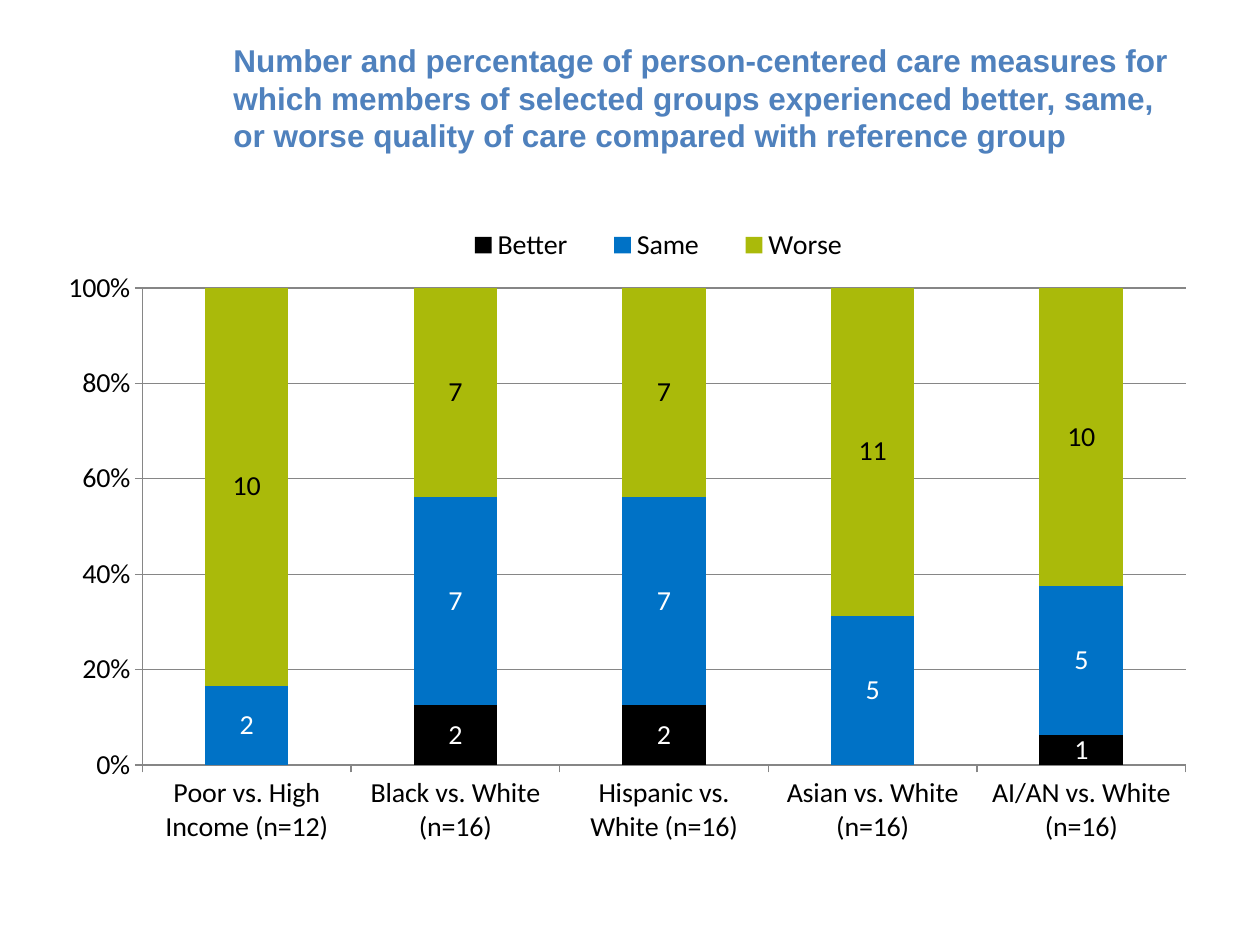
from lxml import etree
from pptx import Presentation
from pptx.chart.data import CategoryChartData
from pptx.dml.color import RGBColor
from pptx.enum.chart import XL_CHART_TYPE, XL_LABEL_POSITION, XL_LEGEND_POSITION, XL_TICK_MARK
from pptx.enum.text import MSO_ANCHOR, MSO_AUTO_SIZE, PP_ALIGN
from pptx.oxml.ns import qn
from pptx.util import Cm, Pt

STACKED = XL_CHART_TYPE.COLUMN_STACKED_100
CENTER = XL_LABEL_POSITION.CENTER
TOP = XL_LEGEND_POSITION.TOP
OUTSIDE = XL_TICK_MARK.OUTSIDE
MIDDLE = MSO_ANCHOR.MIDDLE
NO_FIT = MSO_AUTO_SIZE.NONE
LEFT = PP_ALIGN.LEFT

TITLE_BLUE = RGBColor(0x4F, 0x81, 0xBD)
BLACK = RGBColor(0x00, 0x00, 0x00)
WHITE = RGBColor(0xFF, 0xFF, 0xFF)
BLUE = RGBColor(0x00, 0x72, 0xC6)
GREEN = RGBColor(0xAA, 0xBA, 0x0A)
GRAY = RGBColor(0x86, 0x86, 0x86)

TITLE = ("Number and percentage of person-centered care measures for which "
         "members of selected groups experienced better, same, or worse "
         "quality of care compared with reference group")
GROUPS = ["Poor vs. High Income (n=12)", "Black vs. White (n=16)",
          "Hispanic vs. White (n=16)", "Asian vs. White (n=16)",
          "AI/AN vs. White (n=16)"]
SERIES = [("Better", (None, 2, 2, None, 1), BLACK, WHITE),
          ("Same", (2, 7, 7, 5, 5), BLUE, WHITE),
          ("Worse", (10, 7, 7, 11, 10), GREEN, BLACK)]


def format_font(font, name="Calibri", size=16, color=BLACK, bold=False):
    font.name = name
    font.size = Pt(size)
    font.bold = bold
    font.color.rgb = color


def write_text(tf, text, align=LEFT, anchor=MIDDLE, **font_format):
    tf.word_wrap = True
    tf.auto_size = NO_FIT
    tf.vertical_anchor = anchor
    p = tf.paragraphs[0]
    p.alignment = align
    r = p.add_run()
    r.text = text
    format_font(r.font, **font_format)


def make_layout(x, y, w, h, inner=False):
    layout = etree.Element(qn("c:layout"))
    manual = etree.SubElement(layout, qn("c:manualLayout"))
    settings = [("layoutTarget", "inner")] if inner else []
    settings += [("xMode", "edge"), ("yMode", "edge"),
                 ("x", x), ("y", y), ("w", w), ("h", h)]
    for tag, value in settings:
        etree.SubElement(manual, qn(f"c:{tag}")).set("val", str(value))
    return layout


def add_title(s, left, top, width, height):
    sp = s.shapes.title
    sp.left, sp.top, sp.width, sp.height = left, top, width, height
    write_text(sp.text_frame, TITLE, name="Arial", size=18,
               color=TITLE_BLUE, bold=True)


def format_axis(axis):
    axis.major_tick_mark = OUTSIDE
    format_font(axis.tick_labels.font)
    axis.format.line.color.rgb = GRAY
    axis.format.line.width = Pt(0.75)


def format_series(series, fill, label_color):
    series.smooth = False if hasattr(series, "smooth") else None
    series.format.fill.solid()
    series.format.fill.fore_color.rgb = fill
    labels = series.data_labels
    labels.show_value = True
    labels.position = CENTER
    format_font(labels.font, color=label_color)


def add_care_chart(s, left, top, width, height):
    data = CategoryChartData()
    data.categories = GROUPS
    for name, values, _, _ in SERIES:
        data.add_series(name, values)
    chart = s.shapes.add_chart(STACKED, left, top, width, height, data).chart
    format_font(chart.font, name="Arial", size=10)
    chart.has_title = False

    plot = chart.plots[0]
    plot.gap_width = 150
    plot.overlap = 100
    plot.vary_by_categories = False
    for series, (_, _, fill, label_color) in zip(plot.series, SERIES):
        format_series(series, fill, label_color)

    format_axis(chart.category_axis)
    axis = chart.value_axis
    format_axis(axis)
    axis.minimum_scale, axis.maximum_scale, axis.major_unit = 0, 1, 0.2
    axis.tick_labels.number_format = "0%"
    axis.tick_labels.number_format_is_linked = False
    axis.has_major_gridlines = True
    axis.major_gridlines.format.line.color.rgb = GRAY
    axis.major_gridlines.format.line.width = Pt(0.75)

    chart.has_legend = True
    legend = chart.legend
    legend.position = TOP
    legend.include_in_layout = False
    format_font(legend.font)
    legend_pos = legend._element.find(qn("c:legendPos"))
    legend_pos.addnext(make_layout(0.33, 0.01, 0.39, 0.06))

    plot_area = chart._chartSpace.chart.plotArea
    for old in plot_area.findall(qn("c:layout")):
        plot_area.remove(old)
    plot_area.insert(0, make_layout(0.07, 0.11, 0.92, 0.78, inner=True))


def main():
    prs = Presentation()
    prs.slide_width, prs.slide_height = Cm(25.4), Cm(19.05)
    s = prs.slides.add_slide(prs.slide_layouts[5])
    add_title(s, Cm(4.45), Cm(0.76), Cm(19.69), Cm(2.41))
    add_care_chart(s, Cm(1.27), Cm(4.45), Cm(22.86), Cm(12.57))
    prs.save("out.pptx")


if __name__ == "__main__":
    main()
